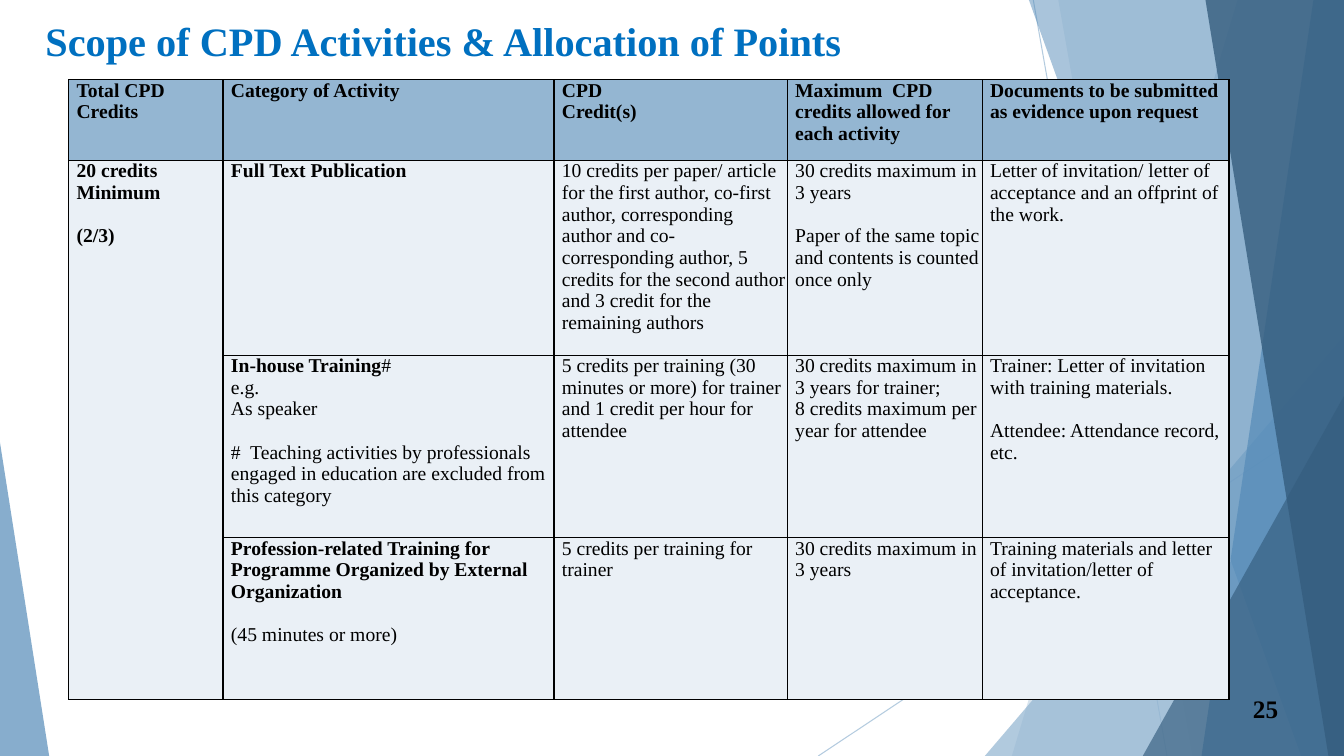
from lxml import etree
from pptx import Presentation
from pptx.dml.color import RGBColor
from pptx.enum.shapes import MSO_CONNECTOR, MSO_SHAPE
from pptx.enum.text import MSO_ANCHOR, MSO_AUTO_SIZE, PP_ALIGN
from pptx.oxml import parse_xml
from pptx.oxml.ns import nsdecls, qn
from pptx.util import Cm, Pt

STRAIGHT, TRIANGLE = MSO_CONNECTOR.STRAIGHT, MSO_SHAPE.RIGHT_TRIANGLE
TRIANGLE = MSO_SHAPE.ISOSCELES_TRIANGLE
TOP, MIDDLE, BOTTOM = MSO_ANCHOR.TOP, MSO_ANCHOR.MIDDLE, MSO_ANCHOR.BOTTOM
LEFT, RIGHT = PP_ALIGN.LEFT, PP_ALIGN.RIGHT
NO_FIT = MSO_AUTO_SIZE.NONE

# Content
WIDE, HIGH = 33.87, 19.05
FONT = "Times New Roman"
PALE, MID, DARK, CELL = "94B6D2", "558BB8", "355D7E", "EAF0F6"
TITLE = "Scope of CPD Activities & Allocation of Points"
NUMBER = "25"

# Each cell holds groups of lines; a gap parts the groups, ** marks bold
HEAD = [
    [["**Total CPD**", "**Credits**"]],
    [["**Category of Activity**"]],
    [["**CPD**", "**Credit(s)**"]],
    [["**Maximum  CPD  credits allowed for each activity**"]],
    [["**Documents to be submitted as evidence upon request**"]],
]
BODY = [
    [
        [["**20 credits**", "**Minimum**"], ["**(2/3)**"]],
        [["**Full Text Publication**"]],
        [["10 credits per paper/ article for the first author, co-first author, "
          "corresponding author and co-corresponding author, 5 credits for the "
          "second author and 3 credit for the remaining authors"]],
        [["30 credits maximum in 3 years"],
         ["Paper of the same topic and contents is counted once only"]],
        [["Letter of invitation/ letter of acceptance and an offprint of the work."]],
    ],
    [
        [],
        [["**In-house Training**#", "e.g.", "As speaker"],
         ["#  Teaching activities by professionals engaged in education are "
          "excluded from this category"]],
        [["5 credits per training (30 minutes or more) for trainer and 1 credit "
          "per hour for attendee"]],
        [["30 credits maximum in 3 years for trainer;",
          "8 credits maximum per year for attendee"]],
        [["Trainer: Letter of invitation with training materials."],
         ["Attendee: Attendance record, etc."]],
    ],
    [
        [],
        [["**Profession-related Training for Programme Organized by External "
          "Organization**"], ["(45 minutes or more)"]],
        [["5 credits per training for trainer"]],
        [["30 credits maximum in 3 years"]],
        [["Training materials and letter of invitation/letter of acceptance."]],
    ],
]
COLS = [3.89, 8.34, 5.88, 4.91, 6.22]
ROWS = [2.03, 4.91, 4.6, 4.08]
GAP = 15.5

# Backdrop: rays by end points, bands by top and foot x, peaks by box and apex
RAYS = [(26.04, 0, 29.41, HIGH), (WIDE, 10.24, 20.62, HIGH)]
FACETS = [
    ((31.19, 25.5), PALE, 36),
    ((26.67, 30.05), PALE, 20),
    ((24.82, 8.46, 9.05, 10.59, 1), PALE, 72),
    ((25.93, 32.79), MID, 50),
    ((33.1, 30.28), MID, 70),
    ((30.38, 33.48), DARK, 80),
    ((28.8, 9.98, 5.07, 9.07, 1), DARK, 66),
    ((0, 11.15, 1.24, 7.9, 0), MID, 70),
]


def rgb(code):
    return RGBColor.from_string(code)


def fade(shape, share):
    tint = shape.element.spPr.find(".//" + qn("a:srgbClr"))
    etree.SubElement(tint, qn("a:alpha"), val=str(share * 1000))


def put(target, formats):
    for name, value in formats.items():
        setattr(target, name, value)


def write(para, text, size, color, bold):
    run = para.add_run()
    run.text = text
    put(run.font, {"name": FONT, "size": Pt(size), "bold": bold})
    run.font.color.rgb = rgb(color)


def edge(cell):
    props = cell._tc.get_or_add_tcPr()
    for side in "LRTB":
        props.append(parse_xml(
            f'<a:ln{side} {nsdecls("a")} w="12700"><a:solidFill>'
            f'<a:srgbClr val="000000"/></a:solidFill></a:ln{side}>'))


def fill_cell(cell, groups, color):
    put(cell, {"margin_left": Cm(0.2), "margin_right": 0, "margin_top": 0,
               "margin_bottom": 0, "vertical_anchor": TOP})
    edge(cell)
    cell.fill.solid()
    cell.fill.fore_color.rgb = rgb(color)
    frame = cell.text_frame
    lines = [(line, bool(g) and not i) for g, group in enumerate(groups)
             for i, line in enumerate(group)]
    for n, (line, apart) in enumerate(lines):
        para = frame.add_paragraph() if n else frame.paragraphs[0]
        if apart:
            para.space_before = Pt(GAP)
        for i, part in enumerate(line.split("**")):
            if part:
                write(para, part, 14, "000000", i % 2 == 1)


deck = Presentation()
deck.slide_width, deck.slide_height = Cm(WIDE), Cm(HIGH)
slide = deck.slides.add_slide(deck.slide_layouts[5])
shapes = slide.shapes

# Backdrop
for ends in RAYS:
    ray = shapes.add_connector(STRAIGHT, *map(Cm, ends))
    ray.line.width = Pt(0.75)
    ray.line.color.rgb = rgb(PALE)
    fade(ray, 70)
    etree.SubElement(ray.element.spPr, qn("a:effectLst"))

for place, color, share in FACETS:
    if len(place) == 2:
        top, foot = map(Cm, place)
        pen = shapes.build_freeform(top, 0)
        pen.add_line_segments(
            [(Cm(WIDE), 0), (Cm(WIDE), Cm(HIGH)), (foot, Cm(HIGH))], close=True)
        facet = pen.convert_to_shape()
    else:
        *box, apex = place
        facet = shapes.add_shape(TRIANGLE, *map(Cm, box))
        facet.adjustments[0] = apex
    facet.shadow.inherit = False
    facet.fill.solid()
    facet.fill.fore_color.rgb = rgb(color)
    fade(facet, share)
    facet.line.fill.background()

# Title
title = shapes.title
put(title, {"left": Cm(0.89), "top": Cm(0.28), "width": Cm(32.46), "height": Cm(1.42)})
put(title.text_frame, {"vertical_anchor": BOTTOM, "margin_bottom": Cm(0.08),
                       "word_wrap": True, "auto_size": NO_FIT})
para = title.text_frame.paragraphs[0]
para.alignment = LEFT
write(para, TITLE, 28.8, "0070C0", True)

# Slide number
box = shapes.add_textbox(Cm(30.56), Cm(17.35), Cm(1.9), Cm(1.02))
put(box.text_frame, {"vertical_anchor": MIDDLE, "word_wrap": True})
para = box.text_frame.paragraphs[0]
para.alignment = RIGHT
write(para, NUMBER, 18, "000000", True)

# Table
table = shapes.add_table(len(ROWS), len(COLS), Cm(1.73), Cm(2.01),
                         Cm(sum(COLS)), Cm(sum(ROWS))).table
put(table, {"first_row": False, "horz_banding": False})
for col, width in zip(table.columns, COLS):
    col.width = Cm(width)
for row, height in zip(table.rows, ROWS):
    row.height = Cm(height)
for r, cells in enumerate([HEAD] + BODY):
    for c, groups in enumerate(cells):
        fill_cell(table.cell(r, c), groups, CELL if r else PALE)
table.cell(1, 0).merge(table.cell(len(BODY), 0))

deck.save("out.pptx")
